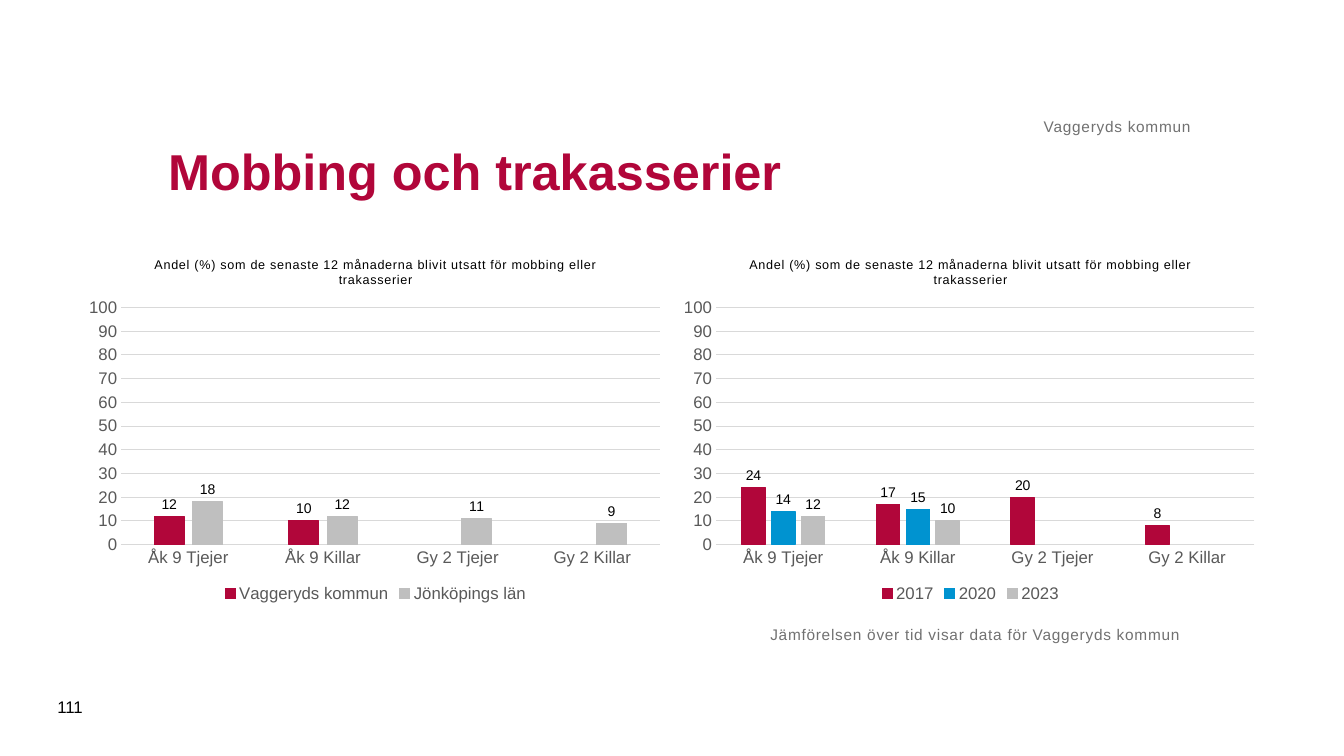
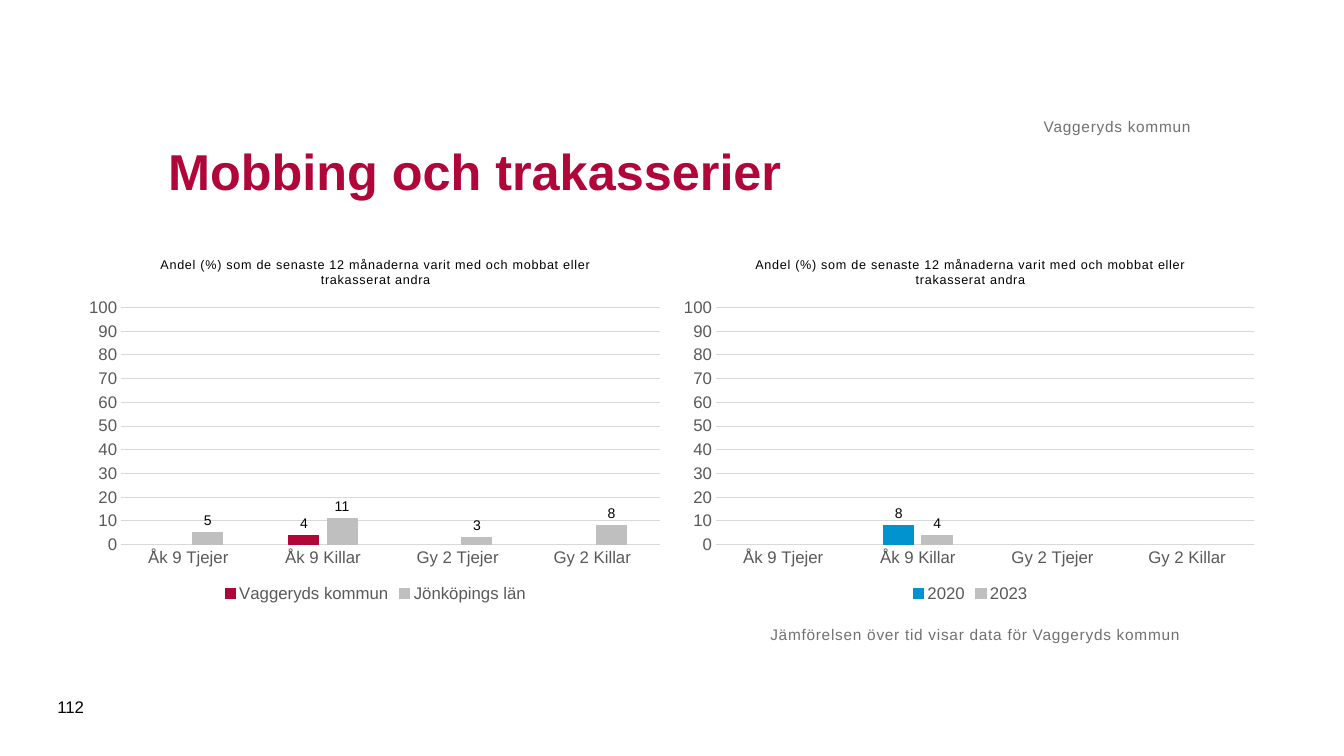
from dataclasses import dataclass
from typing import Optional

from lxml import etree
from pptx import Presentation
from pptx.chart import data as cd
from pptx.dml.color import RGBColor
from pptx.enum import chart as ce, text
from pptx.oxml.ns import qn
from pptx.util import Inches, Pt

CRIMSON = RGBColor(0xB1, 0x06, 0x3A)
BLUE = RGBColor(0x00, 0x93, 0xD0)
SILVER = RGBColor(0xBF, 0xBF, 0xBF)
GRID = RGBColor(0xD9, 0xD9, 0xD9)
AXIS_TEXT = RGBColor(0x59, 0x59, 0x59)
NOTE_TEXT = RGBColor(0x71, 0x71, 0x71)
BLACK = RGBColor(0, 0, 0)

FONT = "Arial"
NUMBER_FORMAT = "#,##0;#,##0"
LETTER_SPACING = "50"
KOMMUN = "Vaggeryds kommun"
LAN = "Jönköpings län"
CATEGORIES = ["Åk 9 Tjejer", "Åk 9 Killar", "Gy 2 Tjejer", "Gy 2 Killar"]
SERIES_COLORS = {KOMMUN: CRIMSON, LAN: SILVER,
                 "2017": CRIMSON, "2020": BLUE, "2023": SILVER}
CHART_LEFTS = (0.79, 6.69)
CHART_TOP, CHART_WIDTH, CHART_HEIGHT = 2.4, 5.87, 3.62
PLOT_LAYOUT = {"layoutTarget": "inner", "xMode": "edge", "yMode": "edge",
               "x": "0.07", "y": "0.18", "w": "0.91", "h": "0.65"}

Values = list[Optional[int]]


@dataclass(frozen=True)
class TextStyle:
    left: float
    top: float
    width: float
    height: float
    size: float
    color: RGBColor
    bold: bool = False
    spaced: bool = False
    inset: bool = True
    anchor: text.MSO_ANCHOR = text.MSO_ANCHOR.MIDDLE
    align: text.PP_ALIGN = text.PP_ALIGN.LEFT


@dataclass(frozen=True)
class SurveySlide:
    number: int
    question: str
    comparison: dict[str, Values]
    trend: dict[str, Values]


TITLE = TextStyle(1.57, 0.98, 10.24, 1.42, 36, CRIMSON, bold=True)
TREND_NOTE = TextStyle(7.64, 6.2, 5.31, 0.94, 11, NOTE_TEXT, spaced=True,
                       inset=False, anchor=text.MSO_ANCHOR.TOP)
PLACE = TextStyle(1.57, 0.62, 10.24, 0.73, 11, NOTE_TEXT, spaced=True, inset=False,
                  anchor=text.MSO_ANCHOR.BOTTOM, align=text.PP_ALIGN.RIGHT)
PAGE_NUMBER = TextStyle(0.47, 6.81, 0.57, 0.4, 12, BLACK)

SLIDES = [
    SurveySlide(
        111,
        "Andel (%) som de senaste 12 månaderna blivit utsatt för mobbing eller trakasserier",
        {KOMMUN: [12, 10, None, None], LAN: [18, 12, 11, 9]},
        {"2017": [24, 17, 20, 8], "2020": [14, 15, None, None],
         "2023": [12, 10, None, None]},
    ),
    SurveySlide(
        112,
        "Andel (%) som de senaste 12 månaderna varit med och mobbat eller trakasserat andra",
        {KOMMUN: [None, 4, None, None], LAN: [5, 11, 3, 8]},
        {"2020": [None, 8, None, None], "2023": [None, 4, None, None]},
    ),
]


def apply(target, values: dict) -> None:
    """Set each named attribute of target."""
    for name, value in values.items():
        setattr(target, name, value)


def set_font(font, size: float, color: RGBColor, bold: bool = False) -> None:
    apply(font, {"name": FONT, "size": Pt(size), "bold": bold})
    font.color.rgb = color


def set_line(line, color: RGBColor) -> None:
    line.color.rgb = color
    line.width = Pt(0.75)


def write_run(p, content: str, size: float, color: RGBColor,
              bold: bool = False, spaced: bool = False) -> None:
    r = p.add_run()
    r.text = content
    set_font(r.font, size, color, bold)
    if spaced:
        r._r.get_or_add_rPr().set("spc", LETTER_SPACING)


def add_text(s, content: str, style: TextStyle) -> None:
    sp = s.shapes.add_textbox(Inches(style.left), Inches(style.top),
                              Inches(style.width), Inches(style.height))
    tf = sp.text_frame
    apply(tf, {"word_wrap": True, "vertical_anchor": style.anchor})
    if not style.inset:
        apply(tf, {f"margin_{side}": 0 for side in ("left", "top", "right", "bottom")})
    p = tf.paragraphs[0]
    p.alignment = style.align
    write_run(p, content, style.size, style.color, style.bold, style.spaced)


def fix_plot_area(chart) -> None:
    """Place the plot area so that all charts line up."""
    plot_area = chart._chartSpace.chart.plotArea
    layout = plot_area.find(qn("c:layout"))
    if layout is None:
        layout = etree.Element(qn("c:layout"))
        plot_area.insert(0, layout)
    manual = etree.SubElement(layout, qn("c:manualLayout"))
    for name, value in PLOT_LAYOUT.items():
        etree.SubElement(manual, qn(f"c:{name}")).set("val", value)


def style_axes(chart) -> None:
    for axis in (chart.category_axis, chart.value_axis):
        apply(axis, {"major_tick_mark": ce.XL_TICK_MARK.NONE,
                     "minor_tick_mark": ce.XL_TICK_MARK.NONE})
        set_font(axis.tick_labels.font, 12, AXIS_TEXT)
    set_line(chart.category_axis.format.line, GRID)
    axis = chart.value_axis
    apply(axis, {"minimum_scale": 0, "maximum_scale": 100, "major_unit": 10,
                 "has_major_gridlines": True})
    apply(axis.tick_labels, {"number_format": NUMBER_FORMAT,
                             "number_format_is_linked": False})
    axis.format.line.fill.background()
    set_line(axis.major_gridlines.format.line, GRID)


def add_column_chart(s, left: float, question: str, series: dict[str, Values]) -> None:
    data = cd.CategoryChartData()
    data.categories = CATEGORIES
    for name, values in series.items():
        data.add_series(name, values)
    chart = s.shapes.add_chart(
        ce.XL_CHART_TYPE.COLUMN_CLUSTERED, Inches(left), Inches(CHART_TOP),
        Inches(CHART_WIDTH), Inches(CHART_HEIGHT), data).chart
    set_font(chart.font, 10, BLACK)

    chart.has_title = True
    chart.chart_title.include_in_layout = False
    write_run(chart.chart_title.text_frame.paragraphs[0], question, 9, BLACK, spaced=True)

    chart.has_legend = True
    apply(chart.legend, {"position": ce.XL_LEGEND_POSITION.BOTTOM,
                         "include_in_layout": False})
    set_font(chart.legend.font, 12, AXIS_TEXT)

    plot = chart.plots[0]
    apply(plot, {"gap_width": 219, "overlap": -27, "vary_by_categories": False,
                 "has_data_labels": True})
    apply(plot.data_labels, {"show_value": True, "number_format": NUMBER_FORMAT,
                             "number_format_is_linked": False,
                             "position": ce.XL_LABEL_POSITION.OUTSIDE_END})
    set_font(plot.data_labels.font, 10, BLACK)
    for columns in plot.series:
        color = SERIES_COLORS[columns.name]
        columns.format.fill.solid()
        columns.format.fill.fore_color.rgb = color
        set_line(columns.format.line, color)
    style_axes(chart)
    fix_plot_area(chart)


def add_survey_slide(prs, survey: SurveySlide) -> None:
    s = prs.slides.add_slide(prs.slide_layouts[6])
    for left, series in zip(CHART_LEFTS, (survey.comparison, survey.trend)):
        add_column_chart(s, left, survey.question, series)
    add_text(s, "Mobbing och trakasserier", TITLE)
    add_text(s, f"Jämförelsen över tid visar data för {KOMMUN}", TREND_NOTE)
    add_text(s, KOMMUN, PLACE)
    add_text(s, str(survey.number), PAGE_NUMBER)


def main() -> None:
    prs = Presentation()
    apply(prs, {"slide_width": Inches(13.33), "slide_height": Inches(7.5)})
    for survey in SLIDES:
        add_survey_slide(prs, survey)
    prs.save("out.pptx")


if __name__ == "__main__":
    main()
